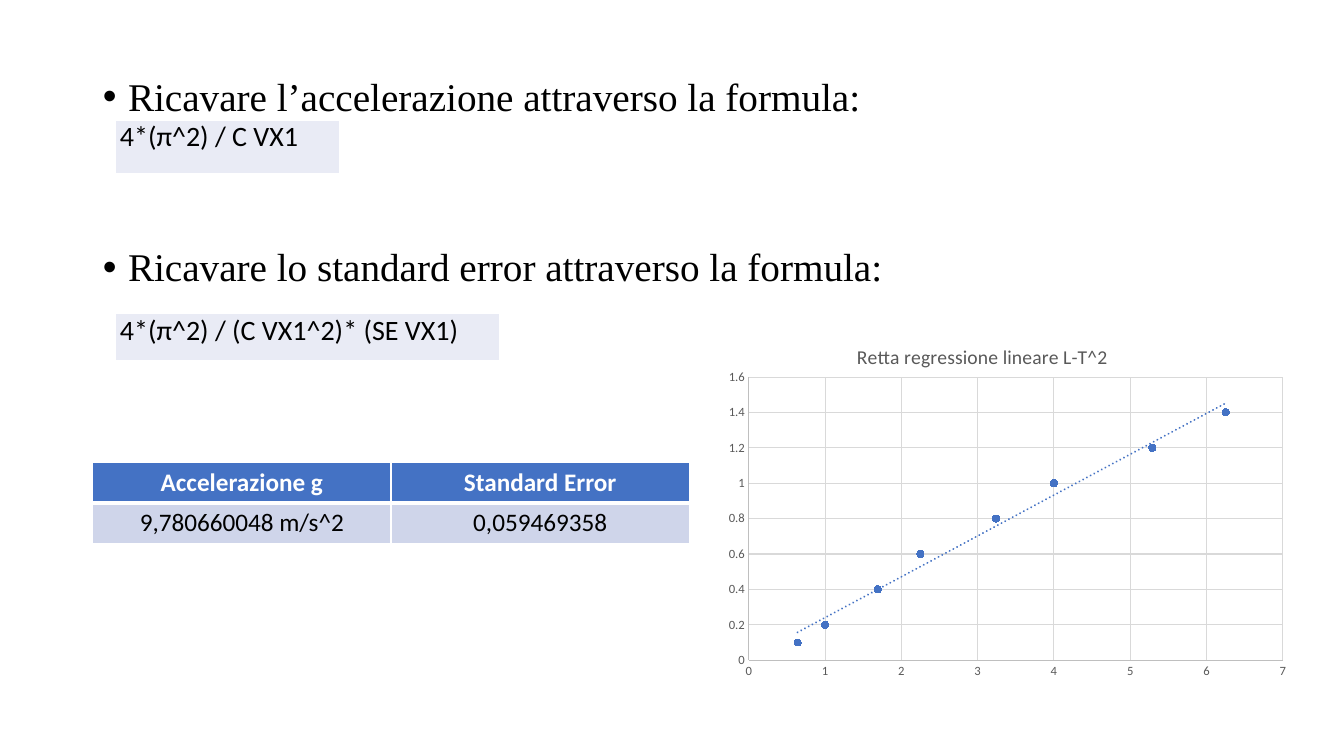
import pptx
import pptx.chart.data
import pptx.dml.color
import pptx.enum.chart
import pptx.enum.text
import pptx.oxml
import pptx.oxml.ns
import pptx.util

WIDTH, HEIGHT = 13.33, 7.5
BLUE, WHITE, BLACK, GREY = "4472C4", "FFFFFF", "000000", "595959"
A_NS = pptx.oxml.ns.nsdecls("a")
C_NS = pptx.oxml.ns.nsdecls("c")
PERIODS_SQUARED = [0.64, 1, 1.69, 2.25, 3.24, 4, 5.29, 6.25]
LENGTHS = [0.1, 0.2, 0.4, 0.6, 0.8, 1, 1.2, 1.4]


def rgb(value):
    """Turn a hex string into a colour."""
    return pptx.dml.color.RGBColor.from_string(value)


def area(left, top, width, height):
    """Turn percentages of the slide into left, top, width and height."""
    sides = (WIDTH, HEIGHT, WIDTH, HEIGHT)
    return [pptx.util.Inches(side * share / 100)
            for side, share in zip(sides, (left, top, width, height))]


def style_font(font, size, color, name="Calibri", bold=False):
    """Set the face, size, colour and weight of a font."""
    font.name, font.size, font.bold = name, pptx.util.Pt(size), bold
    font.color.rgb = rgb(color)


def add_bullets(slide, box, lines, gap):
    """Fill the body placeholder with bulleted lines, a gap in points apart."""
    sp = slide.placeholders[1]
    sp.left, sp.top, sp.width, sp.height = box
    tf = sp.text_frame
    tf.text = "\n".join(lines)
    tf.word_wrap = True
    tf.auto_size = pptx.enum.text.MSO_AUTO_SIZE.NONE
    tf.vertical_anchor = pptx.enum.text.MSO_ANCHOR.TOP
    for i, p in enumerate(tf.paragraphs):
        p.line_spacing = 0.9
        p.space_before = pptx.util.Pt(gap if i else 10)
        p.alignment = pptx.enum.text.PP_ALIGN.LEFT
        pPr = p._p.get_or_add_pPr()
        indent = pptx.util.Inches(0.25)
        pPr.set("marL", str(indent))
        pPr.set("indent", str(-indent))
        pPr.append(pptx.oxml.parse_xml(f'<a:buFont {A_NS} typeface="Arial"/>'))
        pPr.append(pptx.oxml.parse_xml(f'<a:buChar {A_NS} char="•"/>'))
        style_font(p.runs[0].font, 28, BLACK, "Times New Roman")


def style_cell(cell, text, fill, size, color, bold=False, bottom=1):
    """Write a cell with white borders and a plain fill."""
    tcPr = cell._tc.get_or_add_tcPr()
    for side, points in zip("LRTB", (1, 1, 1, bottom)):
        tcPr.append(pptx.oxml.parse_xml(
            f'<a:ln{side} {A_NS} w="{pptx.util.Pt(points)}"><a:solidFill>'
            f'<a:srgbClr val="{WHITE}"/></a:solidFill></a:ln{side}>'))
    cell.fill.solid()
    cell.fill.fore_color.rgb = rgb(fill)
    cell.text_frame.text = text
    style_font(cell.text_frame.paragraphs[0].runs[0].font, size, color, bold=bold)


def add_formula(slide, box, text):
    """Add a formula in a tinted table of one cell."""
    cell = slide.shapes.add_table(1, 1, *box).table.cell(0, 0)
    style_cell(cell, text, "E9EBF5", 20, BLACK)
    cell.margin_left = cell.margin_right = pptx.util.Inches(0.05)
    cell.margin_top = cell.margin_bottom = 0


def add_results(slide, box, rows):
    """Add a table with a blue header row and centred cells."""
    table = slide.shapes.add_table(len(rows), len(rows[0]), *box).table
    for i, row in enumerate(rows):
        for j, text in enumerate(row):
            cell = table.cell(i, j)
            if i == 0:
                style_cell(cell, text, BLUE, 18, WHITE, bold=True, bottom=3)
            else:
                style_cell(cell, text, "CFD5EA", 18, BLACK)
            cell.vertical_anchor = pptx.enum.text.MSO_ANCHOR.MIDDLE
            cell.text_frame.paragraphs[0].alignment = pptx.enum.text.PP_ALIGN.CENTER


def style_axis(axis, maximum, step):
    """Scale an axis from zero and set its grid, line and labels."""
    axis.minimum_scale, axis.maximum_scale, axis.major_unit = 0, maximum, step
    axis.major_tick_mark = axis.minor_tick_mark = pptx.enum.chart.XL_TICK_MARK.NONE
    axis.has_major_gridlines = True
    for line, color in ((axis.format.line, "BFBFBF"),
                        (axis.major_gridlines.format.line, "D9D9D9")):
        line.color.rgb = rgb(color)
        line.width = pptx.util.Pt(0.75)
    axis.tick_labels.number_format = "General"
    axis.tick_labels.number_format_is_linked = False
    style_font(axis.tick_labels.font, 9, GREY)


def place(part, target="", **shares):
    """Place a chart part by shares of the chart's size."""
    for old in part.xpath("./c:layout"):
        part.remove(old)
    inner = f'<c:layoutTarget val="{target}"/>' if target else ""
    modes = "".join(f'<c:{key}Mode val="edge"/>' for key in "xy")
    values = "".join(f'<c:{key} val="{value}"/>' for key, value in shares.items())
    layout = pptx.oxml.parse_xml(
        f"<c:layout {C_NS}><c:manualLayout>{inner}{modes}{values}"
        "</c:manualLayout></c:layout>")
    texts = part.xpath("./c:tx")
    if texts:
        texts[0].addnext(layout)
    else:
        part.insert(0, layout)


def add_trendline(series):
    """Add a dotted linear trend line to a series."""
    trend = pptx.oxml.parse_xml(
        f'<c:trendline {C_NS} {A_NS}><c:spPr><a:ln w="{pptx.util.Pt(1.5)}" cap="rnd">'
        f'<a:solidFill><a:srgbClr val="{BLUE}"/></a:solidFill>'
        '<a:prstDash val="sysDot"/></a:ln></c:spPr><c:trendlineType val="linear"/>'
        '<c:dispRSqr val="0"/><c:dispEq val="0"/></c:trendline>')
    series._element.xpath("./c:xVal")[0].addprevious(trend)


def add_regression(slide, box, title):
    """Add the scatter chart of length against squared period."""
    data = pptx.chart.data.XyChartData()
    points = data.add_series("Series 1")
    for x, y in zip(PERIODS_SQUARED, LENGTHS):
        points.add_data_point(x, y)
    kind = pptx.enum.chart.XL_CHART_TYPE.XY_SCATTER
    chart = slide.shapes.add_chart(kind, *box, data).chart
    style_font(chart.font, 10, BLACK)
    chart.has_legend = False
    chart.has_title = True
    tf = chart.chart_title.text_frame
    tf.text = title
    style_font(tf.paragraphs[0].runs[0].font, 14, GREY)
    plot = chart.plots[0]
    plot.vary_by_categories = False
    series = plot.series[0]
    series.smooth = False
    series.format.line.fill.background()
    series.marker.style = pptx.enum.chart.XL_MARKER_STYLE.CIRCLE
    series.marker.size = 5
    series.marker.format.fill.solid()
    series.marker.format.fill.fore_color.rgb = rgb(BLUE)
    series.marker.format.line.color.rgb = rgb(BLUE)
    add_trendline(series)
    style_axis(chart.category_axis, 7, 1)
    style_axis(chart.value_axis, 1.6, 0.2)
    place(chart.element.xpath("./c:chart/c:title")[0], x=0.23, y=0.07)
    place(chart.element.xpath("./c:chart/c:plotArea")[0], "inner",
          x=0.05, y=0.17, w=0.92, h=0.76)


def main():
    """Build the slide and save it."""
    prs = pptx.Presentation()
    prs.slide_width = pptx.util.Inches(WIDTH)
    prs.slide_height = pptx.util.Inches(HEIGHT)
    slide = prs.slides.add_slide(prs.slide_layouts[1])
    title = slide.shapes.title.element
    title.getparent().remove(title)
    add_bullets(slide, area(6.9, 9.6, 86.25, 81.2),
                ["Ricavare l’accelerazione attraverso la formula:",
                 "Ricavare lo standard error attraverso la formula:"], 91.5)
    add_formula(slide, area(8.55, 15.9, 16.7, 7), "4*(π^2) / C VX1")
    add_formula(slide, area(8.55, 41.5, 28.65, 6.25), "4*(π^2) / (C VX1^2)* (SE VX1)")
    add_results(slide, area(6.9, 61.1, 44.4, 10.8),
                [["Accelerazione g", "Standard Error"],
                 ["9,780660048 m/s^2", "0,059469358"]])
    add_regression(slide, area(53.55, 41.5, 43.2, 49.3), "Retta regressione lineare L-T^2")
    prs.save("out.pptx")


if __name__ == "__main__":
    main()
